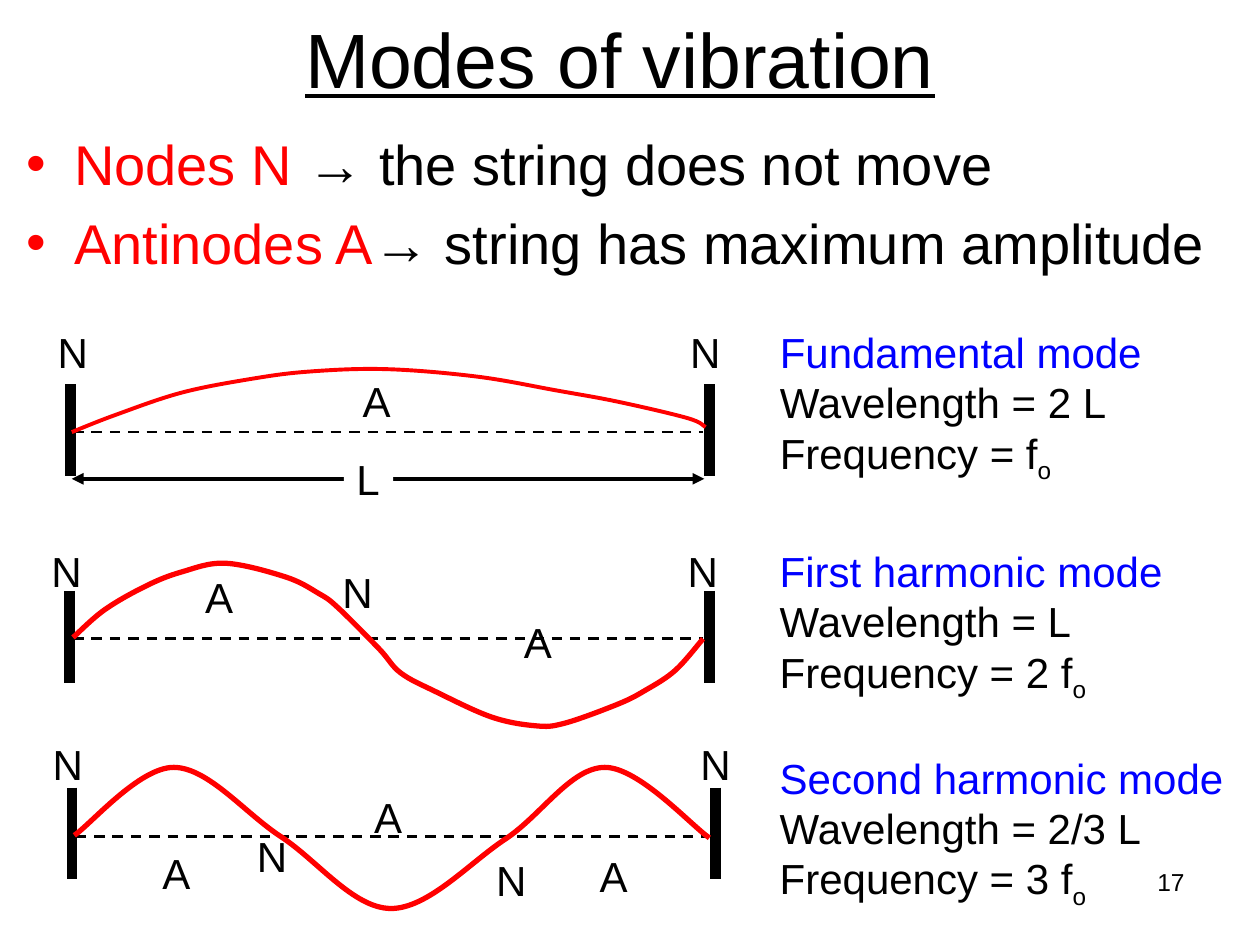
from dataclasses import dataclass

from lxml import etree
from pptx import Presentation
from pptx import util as u
from pptx.dml.color import RGBColor
from pptx.enum import dml, shapes, text
from pptx.oxml.ns import qn


@dataclass(frozen=True)
class Theme:
    font: str = "Arial"
    black: RGBColor = RGBColor(0, 0, 0)
    white: RGBColor = RGBColor(255, 255, 255)
    red: RGBColor = RGBColor(255, 0, 0)
    blue: RGBColor = RGBColor(0, 0, 255)
    title: int = 44
    body: int = 32
    label: int = 24
    number: int = 14


theme = Theme()


def add_text(parent, box, paragraphs, size, align=text.PP_ALIGN.LEFT, wrap=True):
    """Add a text box; each paragraph is a list of (text, colour) runs."""
    shape = parent.add_textbox(*[u.Inches(value) for value in box])
    frame = shape.text_frame
    frame.word_wrap = wrap
    for index, runs in enumerate(paragraphs):
        paragraph = frame.paragraphs[0] if index == 0 else frame.add_paragraph()
        paragraph.alignment = align
        for wording, color in runs:
            run = paragraph.add_run()
            run.text = wording
            run.font.name = theme.font
            run.font.size = u.Pt(size)
            run.font.color.rgb = color
    return shape


def add_line(parent, start, end, width):
    """Add a straight black line without a shadow."""
    line = parent.add_connector(
        shapes.MSO_CONNECTOR.STRAIGHT, *[u.Inches(value) for value in (*start, *end)])
    line.line.color.rgb = theme.black
    line.line.width = u.Pt(width)
    etree.SubElement(line._element.spPr, qn("a:effectLst"))
    return line


presentation = Presentation()
presentation.slide_width = u.Inches(10)
presentation.slide_height = u.Inches(7.5)
slide = presentation.slides.add_slide(presentation.slide_layouts[6])

# Title
title = add_text(slide.shapes, (0.42, 0, 9, 0.91),
                 [[("Modes of vibration", theme.black)]], theme.title,
                 text.PP_ALIGN.CENTER)
title.text_frame.vertical_anchor = text.MSO_ANCHOR.MIDDLE
title.text_frame.paragraphs[0].runs[0].font.underline = True

# Definitions, with hanging red bullets
definitions = add_text(slide.shapes, (0.11, 0.98, 9.56, 1.53), [
    [("Nodes N ", theme.red), ("→ the string does not move", theme.black)],
    [("Antinodes A", theme.red), ("→ string has maximum amplitude", theme.black)],
], theme.body)
for paragraph in definitions.text_frame.paragraphs:
    paragraph.space_before = u.Pt(0.2 * theme.body)
    properties = paragraph._p.get_or_add_pPr()
    properties.set("marL", str(u.Inches(0.38)))
    properties.set("indent", str(-u.Inches(0.38)))
    etree.SubElement(properties, qn("a:buFont"), typeface=theme.font)
    etree.SubElement(properties, qn("a:buChar"), char="•")

# Slide number
add_text(slide.shapes, (7.17, 6.83, 2.33, 0.52), [[("17", theme.black)]],
         theme.number, text.PP_ALIGN.RIGHT)

# Each mode: wall positions, curve anchors and node/antinode labels
modes = [
    dict(name="Fundamental mode", wavelength="2 L", frequency="f",
         notes=(2.54, 3.11), walls=(0.56, 5.63), wall_top=3.05,
         axis=(0.58, 5.58, 3.43), width=2.25,
         anchors=[(0.57, 3.43), (0.9, 3.3), (1.43, 3.12), (1.98, 3.01),
                  (2.45, 2.95), (3.06, 2.93), (3.79, 2.99), (4.42, 3.1),
                  (4.91, 3.19), (5.46, 3.32), (5.6, 3.39)],
         labels=[("N", 0.36, 2.54), ("N", 5.38, 2.54), ("A", 2.78, 2.93)]),
    dict(name="First harmonic mode", wavelength="L", frequency="2 f",
         notes=(4.28, 3.27), walls=(0.55, 5.63), wall_top=4.69,
         axis=(0.58, 5.58, 5.07), width=3,
         anchors=[(0.58, 5.06), (0.83, 4.84), (1.16, 4.65), (1.44, 4.54),
                  (1.79, 4.47), (2.27, 4.58), (2.53, 4.71), (2.68, 4.82),
                  (3.01, 5.15), (3.18, 5.34), (3.46, 5.49), (3.9, 5.69),
                  (4.25, 5.76), (4.48, 5.74), (4.9, 5.59), (5.12, 5.48),
                  (5.36, 5.32), (5.58, 5.07)],
         labels=[("N", 0.31, 4.28), ("N", 2.62, 4.45), ("N", 5.36, 4.28),
                 ("A", 4.06, 4.84), ("A", 1.53, 4.49)]),
    dict(name="Second harmonic mode", wavelength="2/3 L", frequency="3 f",
         notes=(5.92, 3.76), walls=(0.57, 5.68), wall_top=6.25,
         axis=(0.6, 5.63, 6.64), width=3,
         anchors=[(0.59, 6.63), (1.38, 6.09), (2.23, 6.64), (3.1, 7.21),
                  (4.01, 6.66), (4.8, 6.09), (5.63, 6.65)],
         labels=[("N", 0.32, 5.81), ("N", 5.46, 5.81), ("N", 1.94, 6.54),
                 ("N", 3.84, 6.73), ("A", 1.19, 6.68), ("A", 2.87, 6.23),
                 ("A", 4.66, 6.7)]),
]
wall_height = 0.73
label_sizes = {"N": (0.44, 0.5), "A": (0.42, 0.5)}
diagrams = []

for mode in modes:
    diagram = slide.shapes.add_group_shape().shapes
    diagrams.append(diagram)

    # Walls and rest position
    for x in mode["walls"]:
        add_line(diagram, (x, mode["wall_top"]), (x, mode["wall_top"] + wall_height), 6)
    left, right, y = mode["axis"]
    add_line(diagram, (left, y), (right, y), 1.5).line.dash_style = dml.MSO_LINE.DASH

    # Vibrating string
    start, *rest = [[u.Inches(value) for value in point] for point in mode["anchors"]]
    builder = diagram.build_freeform(*start)
    builder.add_line_segments(rest, close=False)
    string = builder.convert_to_shape()
    string.shadow.inherit = False
    string.fill.background()
    string.line.color.rgb = theme.red
    string.line.width = u.Pt(mode["width"])

    # Smooth its segments: each tangent follows the two neighbouring anchors
    points = [(int(point.get("x")), int(point.get("y")))
              for point in string._element.iter(qn("a:pt"))]
    padded = [points[0], *points, points[-1]]
    segments = list(string._element.iter(qn("a:lnTo")))
    for segment, a, b, c, d in zip(segments, padded, padded[1:], padded[2:], padded[3:]):
        curve = etree.Element(qn("a:cubicBezTo"))
        controls = ([q + (r - p) / 6 for p, q, r in zip(a, b, c)],
                    [q - (r - p) / 6 for p, q, r in zip(b, c, d)], c)
        for x, y in controls:
            etree.SubElement(curve, qn("a:pt"), x=str(round(x)), y=str(round(y)))
        segment.getparent().replace(segment, curve)

    # Node and antinode labels
    for letter, x, y in mode["labels"]:
        add_text(diagram, (x, y, *label_sizes[letter]),
                 [[(letter, theme.black)]], theme.label, wrap=False)

    # Name, wavelength and frequency
    top, width = mode["notes"]
    notes = add_text(slide.shapes, (6.09, top, width, 1.31), [
        [(mode["name"], theme.blue)],
        [("Wavelength = " + mode["wavelength"], theme.black)],
        [("Frequency = " + mode["frequency"], theme.black), ("o", theme.black)],
    ], theme.label, wrap=False)
    subscript = notes.text_frame.paragraphs[2].runs[1]
    subscript._r.get_or_add_rPr().set("baseline", "-25000")

# String length: double arrow with its label
length_arrow = add_line(diagrams[0], (0.57, 3.8), (5.59, 3.8), 2.25)
outline = length_arrow._element.spPr.find(qn("a:ln"))
for end in ("a:headEnd", "a:tailEnd"):
    etree.SubElement(outline, qn(end), type="triangle")
length_label = add_text(diagrams[0], (2.73, 3.55, 0.39, 0.5),
                        [[("L", theme.black)]], theme.label, wrap=False)
for shape in (title, length_label):
    shape.fill.solid()
    shape.fill.fore_color.rgb = theme.white

presentation.save("out.pptx")
